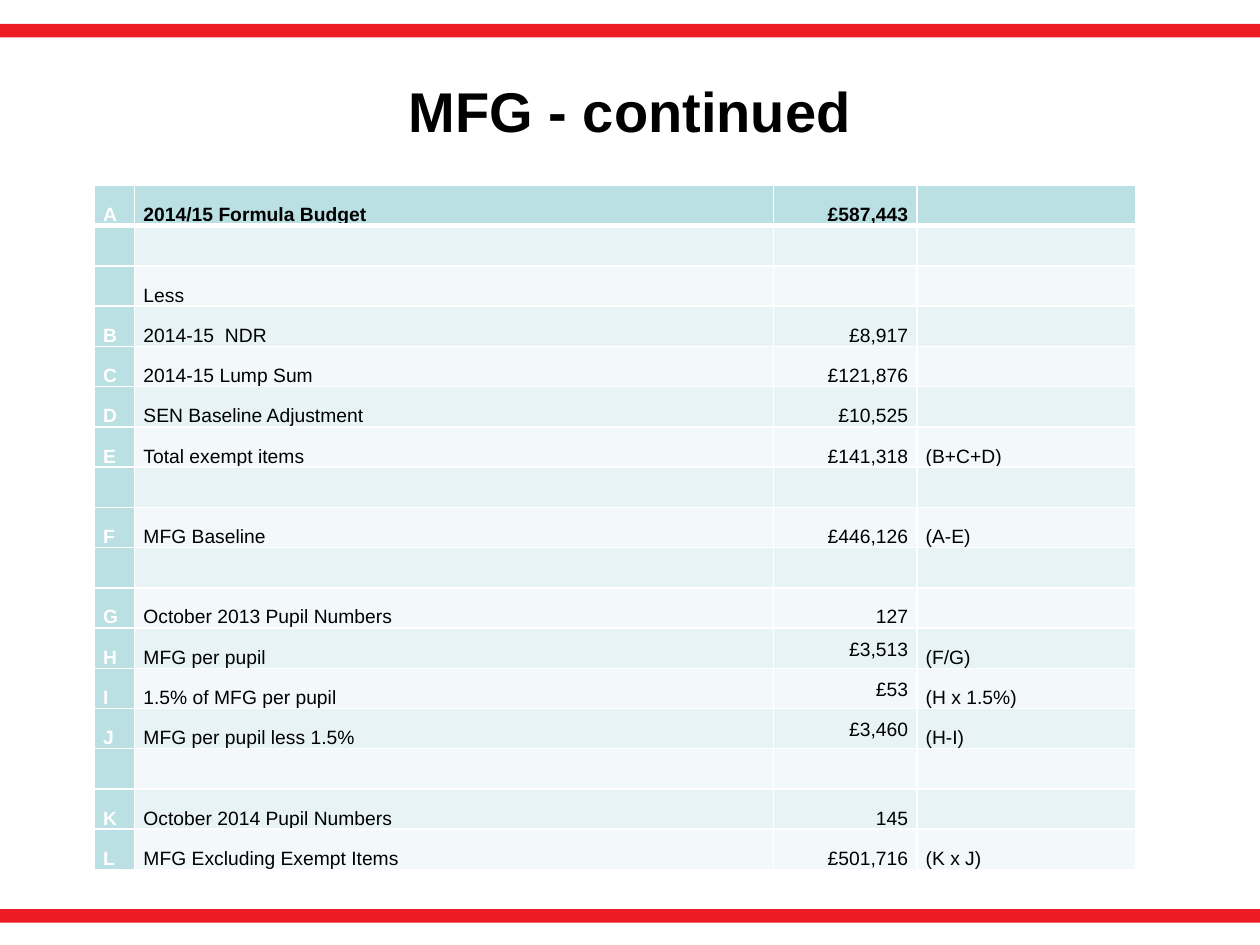
from lxml import etree
from pptx import Presentation
from pptx.dml.color import RGBColor
from pptx.enum.shapes import MSO_SHAPE
from pptx.enum.text import MSO_ANCHOR, PP_ALIGN
from pptx.oxml.ns import qn
from pptx.util import Pt

RECTANGLE = MSO_SHAPE.RECTANGLE
MIDDLE, BOTTOM = MSO_ANCHOR.MIDDLE, MSO_ANCHOR.BOTTOM
LEFT, CENTER, RIGHT = PP_ALIGN.LEFT, PP_ALIGN.CENTER, PP_ALIGN.RIGHT

COLORS = {
    "bar": "ED1C24",
    "header": "BBE0E3",
    "odd_band": "E7F3F4",
    "even_band": "F3F9FA",
    "text": "000000",
    "white": "FFFFFF",
}
FONT = "Arial"
SLIDE_WIDTH, SLIDE_HEIGHT = 720, 540
BAR_TOPS, BAR_HEIGHT = (13.7, 519.5), 7.7
COLUMN_WIDTHS = (23, 365, 82, 125)
ROW_HEIGHT = 23
TABLE_LEFT, TABLE_TOP = 54, 106
RAISED_AMOUNTS = ("H", "I", "J")
EMPTY = ("", "", "", "")
BUDGET_LINES = [
    ("A", "2014/15 Formula Budget", "£587,443", ""),
    EMPTY,
    ("", "Less", "", ""),
    ("B", "2014-15  NDR", "£8,917", ""),
    ("C", "2014-15 Lump Sum", "£121,876", ""),
    ("D", "SEN Baseline Adjustment", "£10,525", ""),
    ("E", "Total exempt items", "£141,318", "(B+C+D)"),
    EMPTY,
    ("F", "MFG Baseline", "£446,126", "(A-E)"),
    EMPTY,
    ("G", "October 2013 Pupil Numbers", "127", ""),
    ("H", "MFG per pupil", "£3,513", "(F/G)"),
    ("I", "1.5% of MFG per pupil", "£53", "(H x 1.5%)"),
    ("J", "MFG per pupil less 1.5%", "£3,460", "(H-I)"),
    EMPTY,
    ("K", "October 2014 Pupil Numbers", "145", ""),
    ("L", "MFG Excluding Exempt Items", "£501,716", "(K x J)"),
]


def rgb(name):
    return RGBColor.from_string(COLORS[name])


def add_run(paragraph, text, size, color, bold):
    run = paragraph.add_run()
    run.text = text
    run.font.name = FONT
    run.font.size = Pt(size)
    run.font.bold = bold
    run.font.color.rgb = rgb(color)


def add_bar(slide, top):
    bar = slide.shapes.add_shape(
        RECTANGLE, Pt(0), Pt(top), Pt(SLIDE_WIDTH), Pt(BAR_HEIGHT))
    bar.shadow.inherit = False
    bar.fill.solid()
    bar.fill.fore_color.rgb = rgb("bar")
    bar.line.fill.background()


def add_title(slide, text):
    title = slide.shapes.add_textbox(Pt(36), Pt(18), Pt(648), Pt(90))
    frame = title.text_frame
    frame.word_wrap = True
    frame.vertical_anchor = MIDDLE
    heading = frame.paragraphs[0]
    heading.alignment = CENTER
    add_run(heading, text, 32, "text", True)


def set_borders(cell, bottom_width):
    properties = cell._tc.get_or_add_tcPr()
    widths = {"lnL": 1, "lnR": 1, "lnT": 1, "lnB": bottom_width}
    for side, width in widths.items():
        line = etree.SubElement(properties, qn(f"a:{side}"), w=str(Pt(width)))
        fill = etree.SubElement(line, qn("a:solidFill"))
        etree.SubElement(fill, qn("a:srgbClr"), val=COLORS["white"])


def fill_color(row, column):
    if row == 0 or column == 0:
        return "header"
    return "odd_band" if row % 2 else "even_band"


def format_cell(cell, row, column):
    set_borders(cell, 3 if row == 0 else 1)
    cell.fill.solid()
    cell.fill.fore_color.rgb = rgb(fill_color(row, column))
    cell.margin_left = cell.margin_right = Pt(5)
    cell.margin_top = cell.margin_bottom = Pt(0)


def write_cell(cell, text, row, column):
    raised = column == 2 and BUDGET_LINES[row][0] in RAISED_AMOUNTS
    cell.vertical_anchor = MIDDLE if raised else BOTTOM
    entry = cell.text_frame.paragraphs[0]
    entry.alignment = RIGHT if column == 2 else LEFT
    entry.line_spacing = 1.15
    entry.space_after = Pt(10)
    color = "white" if column == 0 else "text"
    add_run(entry, text, 11, color, row == 0 or column == 0)


def add_budget_table(slide):
    row_count = len(BUDGET_LINES)
    budget = slide.shapes.add_table(
        row_count, len(COLUMN_WIDTHS), Pt(TABLE_LEFT), Pt(TABLE_TOP),
        Pt(sum(COLUMN_WIDTHS)), Pt(ROW_HEIGHT * row_count)).table
    budget.first_row = False
    budget.horz_banding = False
    for column, width in zip(budget.columns, COLUMN_WIDTHS):
        column.width = Pt(width)
    for row, entries in enumerate(BUDGET_LINES):
        budget.rows[row].height = Pt(ROW_HEIGHT)
        for column, text in enumerate(entries):
            cell = budget.cell(row, column)
            format_cell(cell, row, column)
            if text:
                write_cell(cell, text, row, column)


def main():
    deck = Presentation()
    deck.slide_width, deck.slide_height = Pt(SLIDE_WIDTH), Pt(SLIDE_HEIGHT)
    slide = deck.slides.add_slide(deck.slide_layouts[6])
    for top in BAR_TOPS:
        add_bar(slide, top)
    add_title(slide, "MFG - continued")
    add_budget_table(slide)
    deck.save("out.pptx")


if __name__ == "__main__":
    main()
